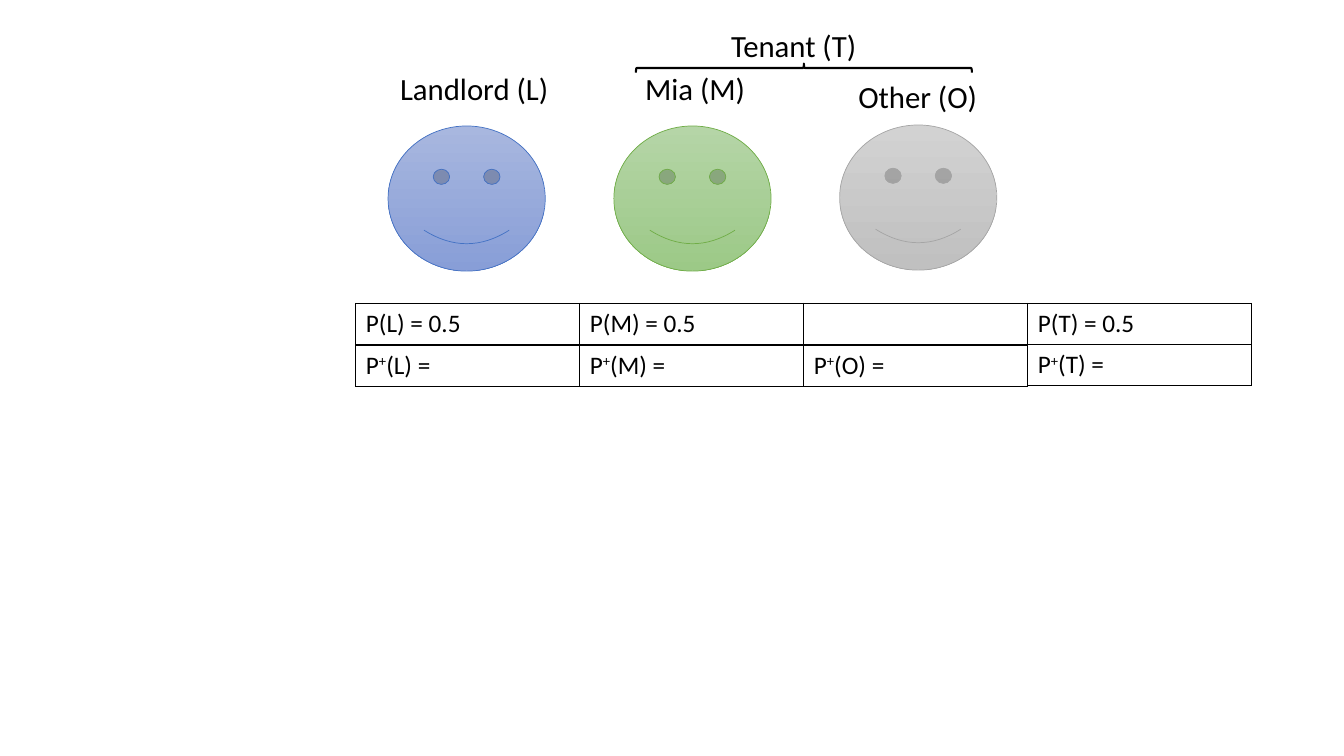
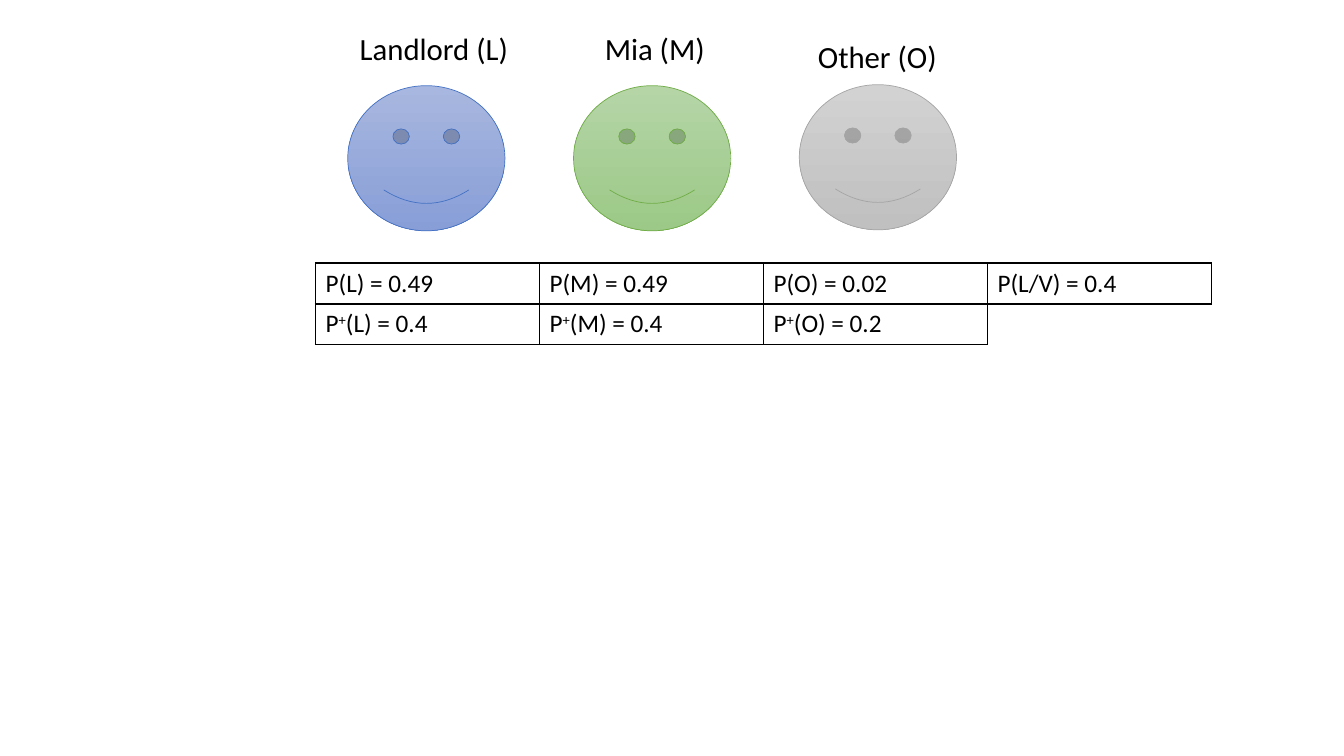
from pptx import Presentation
from pptx.dml.color import RGBColor
from pptx.enum.shapes import MSO_SHAPE as Shape
from pptx.enum.text import MSO_AUTO_SIZE as AutoSize, PP_ALIGN as Align
from pptx.oxml import parse_xml
from pptx.oxml.ns import nsdecls
from pptx.util import Pt

# Shared style
FONT = "Calibri"
BLACK = "000000"
LABEL_SIZE, CELL_SIZE = 22, 18
COLUMN_WIDTH, ROW_HEIGHT = 160, 29.3
FACE_WIDTH, FACE_HEIGHT, FACE_PITCH = 112.3, 103.7, 161.28

# Label, its offset and width, face top, gradient ends, outline
PEOPLE = [
    ("Landlord (L)", 24.5, -170.5, 130, -126.7, "A8B7DF", "889ED7", "4472C4"),
    ("Mia (M)", 199.5, -170.5, 112.3, -126.7, "B5D5A7", "9CC987", "70AD47"),
    ("Other (O)", 351.8, -164.4, 112.3, -127.4, "D2D2D2", "C0C0C0", "A5A5A5"),
]


def color(hex_string):
    return RGBColor.from_string(hex_string)


def style_run(run, size):
    run.font.name = FONT
    run.font.size = Pt(size)
    run.font.color.rgb = color(BLACK)


def add_label(slide, text, left, top, width, align=Align.LEFT):
    box = slide.shapes.add_textbox(Pt(left), Pt(top), Pt(width), Pt(34))
    frame = box.text_frame
    frame.word_wrap = True
    frame.auto_size = AutoSize.SHAPE_TO_FIT_TEXT
    frame.text = text
    paragraph = frame.paragraphs[0]
    paragraph.alignment = align
    style_run(paragraph.runs[0], LABEL_SIZE)


def add_face(slide, left, top, light, dark, outline):
    face = slide.shapes.add_shape(
        Shape.SMILEY_FACE, Pt(left), Pt(top), Pt(FACE_WIDTH), Pt(FACE_HEIGHT))
    face.shadow.inherit = False
    face.fill.gradient()
    face.fill.gradient_angle = 270
    for stop, shade in zip(face.fill.gradient_stops, (light, dark)):
        stop.color.rgb = color(shade)
    face.line.color.rgb = color(outline)
    face.line.width = Pt(0.5)


def add_people(slide, left, top):
    for index, person in enumerate(PEOPLE):
        name, label_x, label_y, label_width, face_y, *colors = person
        add_label(slide, name, left + label_x, top + label_y, label_width)
        add_face(slide, left + 23 + index * FACE_PITCH, top + face_y, *colors)


def add_brace(slide, center_x, center_y, span, depth):
    """Draw a left brace turned upright, so that its tip points up."""
    brace = slide.shapes.add_shape(
        Shape.LEFT_BRACE, Pt(center_x - depth / 2), Pt(center_y - span / 2),
        Pt(depth), Pt(span))
    brace.rotation = 90
    brace.shadow.inherit = False
    brace.fill.background()
    brace.line.color.rgb = color(BLACK)
    brace.line.width = Pt(1.5)


def set_borders(cell):
    properties = cell._tc.get_or_add_tcPr()
    for position, side in enumerate(("lnL", "lnR", "lnT", "lnB")):
        properties.insert(position, parse_xml(
            f'<a:{side} {nsdecls("a")} w="12700"><a:solidFill>'
            f'<a:srgbClr val="{BLACK}"/></a:solidFill></a:{side}>'))


def fill_cell(cell, text):
    """Write the text, raising a plus sign that follows the P."""
    cell.fill.background()
    set_borders(cell)
    paragraph = cell.text_frame.paragraphs[0]
    before, plus, after = text.partition("+")
    for part in filter(None, (before, plus, after)):
        run = paragraph.add_run()
        run.text = part
        style_run(run, CELL_SIZE)
        if part == plus:
            run._r.get_or_add_rPr().set("baseline", "30000")


def add_row(slide, left, top, texts):
    frame = slide.shapes.add_table(
        1, len(texts), Pt(left), Pt(top),
        Pt(COLUMN_WIDTH * len(texts)), Pt(ROW_HEIGHT))
    table = frame.table
    table.first_row = table.horz_banding = False
    for index, text in enumerate(texts):
        table.columns[index].width = Pt(COLUMN_WIDTH)
        fill_cell(table.cell(0, index), text)


def build_tenant_slide(slide):
    left, top = 254.2, 216.7
    add_people(slide, left, top)
    # Bracket over the two possible tenants
    add_label(slide, "Tenant (T)", 429, 15.8, 275.8, Align.CENTER)
    add_brace(slide, 574.2, 48.6, 240, 6.5)
    # Prior and updated probabilities
    add_row(slide, left, top, ["P(L) = 0.5", "P(M) = 0.5"])
    add_row(slide, left, top + 30, ["P+(L) =", "P+(M) =", "P+(O) ="])
    add_row(slide, left + 2 * COLUMN_WIDTH, top, ["", "P(T) = 0.5"])
    add_row(slide, left + 3 * COLUMN_WIDTH, top + 29.4, ["P+(T) ="])


def build_values_slide(slide):
    left, top = 225.4, 187.9
    add_people(slide, left, top)
    # Prior and updated probabilities
    add_row(slide, left, top, ["P(L) = 0.49", "P(M) = 0.49", "P(O) = 0.02"])
    add_row(slide, left, top + 29,
            ["P+(L) = 0.4", "P+(M) = 0.4", "P+(O) = 0.2"])
    add_row(slide, left + 3 * COLUMN_WIDTH, top, ["P(L/V) = 0.4"])


def main():
    presentation = Presentation()
    presentation.slide_width, presentation.slide_height = Pt(960), Pt(540)
    blank = presentation.slide_layouts[6]
    for build in (build_tenant_slide, build_values_slide):
        build(presentation.slides.add_slide(blank))
    presentation.save("out.pptx")


if __name__ == "__main__":
    main()
